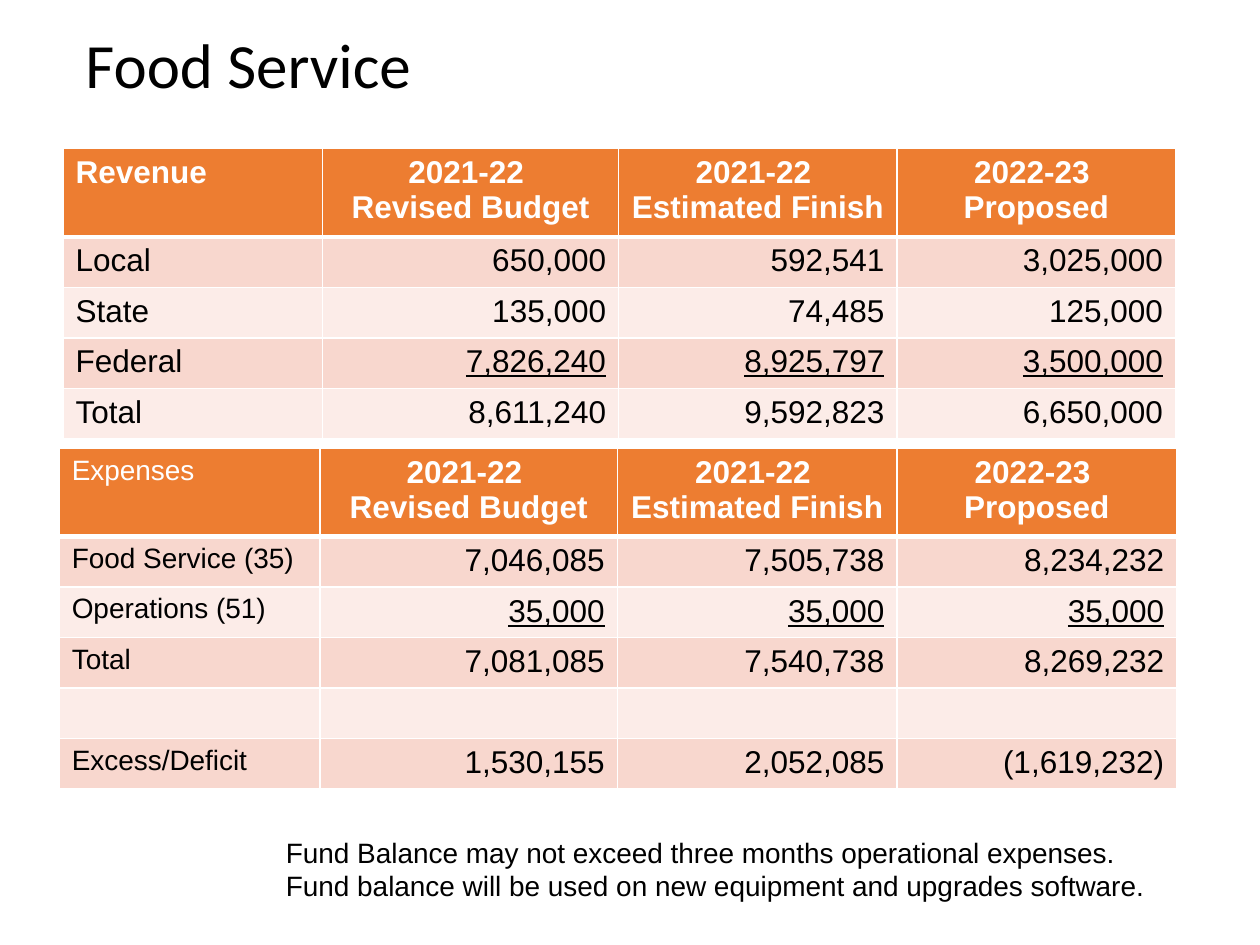
"""Build the Food Service budget slide with revenue and expense tables."""
from dataclasses import dataclass

import lxml.etree
import pptx
import pptx.dml.color
import pptx.enum.text
import pptx.oxml.ns
import pptx.util

Inches = pptx.util.Inches
ALIGN = pptx.enum.text.PP_ALIGN
ANCHOR = pptx.enum.text.MSO_ANCHOR
BLACK, WHITE, ORANGE = "000000", "FFFFFF", "ED7D31"
BANDS = ("F8D7CE", "FCECE8")
PERIODS = ("2021-22 \nRevised Budget", "2021-22 \nEstimated Finish", "2022-23 \nProposed")


@dataclass
class TextStyle:
    size: int
    font: str = "Arial"
    color: str = BLACK
    bold: bool = False
    underline: bool = False
    align: ALIGN = ALIGN.LEFT
    spacing: float = 1.0


@dataclass
class BudgetTable:
    left: float
    top: float
    columns: tuple[float, ...]
    heights: tuple[float, ...]
    heading: str
    rows: tuple[tuple[str, ...], ...]
    underlined_row: str
    label_size: int
    heading_bold: bool


REVENUE = BudgetTable(
    0.5, 1.18, (2.06, 2.35, 2.21, 2.21), (0.65, 0.38, 0.38, 0.38, 0.38), "Revenue",
    (
        ("Local", "650,000", "592,541", "3,025,000"),
        ("State", "135,000", "74,485", "125,000"),
        ("Federal", "7,826,240", "8,925,797", "3,500,000"),
        ("Total", "8,611,240", "9,592,823", "6,650,000"),
    ),
    "Federal", 18, True,
)
EXPENSES = BudgetTable(
    0.47, 3.56, (2.07, 2.36, 2.22, 2.22), (0.65, 0.38, 0.38, 0.38, 0.4, 0.38), "Expenses",
    (
        ("Food Service (35)", "7,046,085", "7,505,738", "8,234,232"),
        ("Operations (51)", "35,000", "35,000", "35,000"),
        ("Total", "7,081,085", "7,540,738", "8,269,232"),
        ("", "", "", ""),
        ("Excess/Deficit", "1,530,155", "2,052,085", "(1,619,232)"),
    ),
    "Operations (51)", 16, False,
)


def rgb(color: str) -> pptx.dml.color.RGBColor:
    """Convert a hex string to a colour."""
    return pptx.dml.color.RGBColor.from_string(color)


def write_text(text_frame, text: str, style: TextStyle) -> None:
    """Write each line of text as one styled paragraph."""
    for index, line in enumerate(text.split("\n")):
        paragraph = text_frame.add_paragraph() if index else text_frame.paragraphs[0]
        paragraph.alignment = style.align
        paragraph.line_spacing = style.spacing
        run = paragraph.add_run()
        run.text = line
        run.font.name = style.font
        run.font.size = pptx.util.Pt(style.size)
        run.font.bold = style.bold
        run.font.underline = style.underline
        run.font.color.rgb = rgb(style.color)


def add_text(slide, left: float, top: float, width: float, height: float,
             text: str, style: TextStyle, anchor: ANCHOR = ANCHOR.TOP) -> None:
    """Add a wrapping text box."""
    shape = slide.shapes.add_textbox(Inches(left), Inches(top), Inches(width), Inches(height))
    shape.text_frame.word_wrap = True
    shape.text_frame.vertical_anchor = anchor
    write_text(shape.text_frame, text, style)


def format_cell(cell, fill: str, top: int, bottom: int) -> None:
    """Give a cell white borders, with widths in points, and a solid fill."""
    properties = cell._tc.get_or_add_tcPr()
    qualified = pptx.oxml.ns.qn
    for side, width in (("L", 1), ("R", 1), ("T", top), ("B", bottom)):
        line = lxml.etree.SubElement(properties, qualified(f"a:ln{side}"), w=str(pptx.util.Pt(width)))
        solid = lxml.etree.SubElement(line, qualified("a:solidFill"))
        lxml.etree.SubElement(solid, qualified("a:srgbClr"), val=WHITE)
    cell.fill.solid()
    cell.fill.fore_color.rgb = rgb(fill)


def cell_style(budget: BudgetTable, row: int, column: int, label: str) -> TextStyle:
    """Choose the text style for a table position."""
    size = 18 if column else budget.label_size
    if row == 0:
        return TextStyle(size, color=WHITE, bold=bool(column) or budget.heading_bold,
                         align=ALIGN.CENTER if column else ALIGN.LEFT)
    return TextStyle(size, underline=bool(column) and label == budget.underlined_row,
                     align=ALIGN.RIGHT if column else ALIGN.LEFT)


def add_budget_table(slide, budget: BudgetTable) -> None:
    """Draw a budget table with a header and banded rows."""
    rows = ((budget.heading, *PERIODS), *budget.rows)
    table = slide.shapes.add_table(
        len(rows), len(budget.columns), Inches(budget.left), Inches(budget.top),
        Inches(sum(budget.columns)), Inches(sum(budget.heights))).table
    for column, width in zip(table.columns, budget.columns):
        column.width = Inches(width)
    for row_index, values in enumerate(rows):
        table.rows[row_index].height = Inches(budget.heights[row_index])
        fill = BANDS[(row_index - 1) % 2] if row_index else ORANGE
        for column_index, value in enumerate(values):
            cell = table.cell(row_index, column_index)
            format_cell(cell, fill, 3 if row_index == 1 else 1, 1 if row_index else 3)
            if value:
                write_text(cell.text_frame, value,
                           cell_style(budget, row_index, column_index, values[0]))


def main() -> None:
    """Build and save the slide."""
    presentation = pptx.Presentation()
    presentation.slide_width, presentation.slide_height = Inches(10), Inches(7.5)
    slide = presentation.slides.add_slide(presentation.slide_layouts[6])
    add_text(slide, 0.58, 0.08, 8.95, 0.92, "Food Service",
             TextStyle(36, font="Calibri", spacing=0.9), ANCHOR.MIDDLE)
    for budget in (REVENUE, EXPENSES):
        add_budget_table(slide, budget)
    add_text(slide, 2.17, 6.58, 7.65, 0.64,
             "Fund Balance may not exceed three months operational expenses.\n"
             "Fund balance will be used on new equipment and upgrades software.", TextStyle(16))
    presentation.save("out.pptx")


if __name__ == "__main__":
    main()
